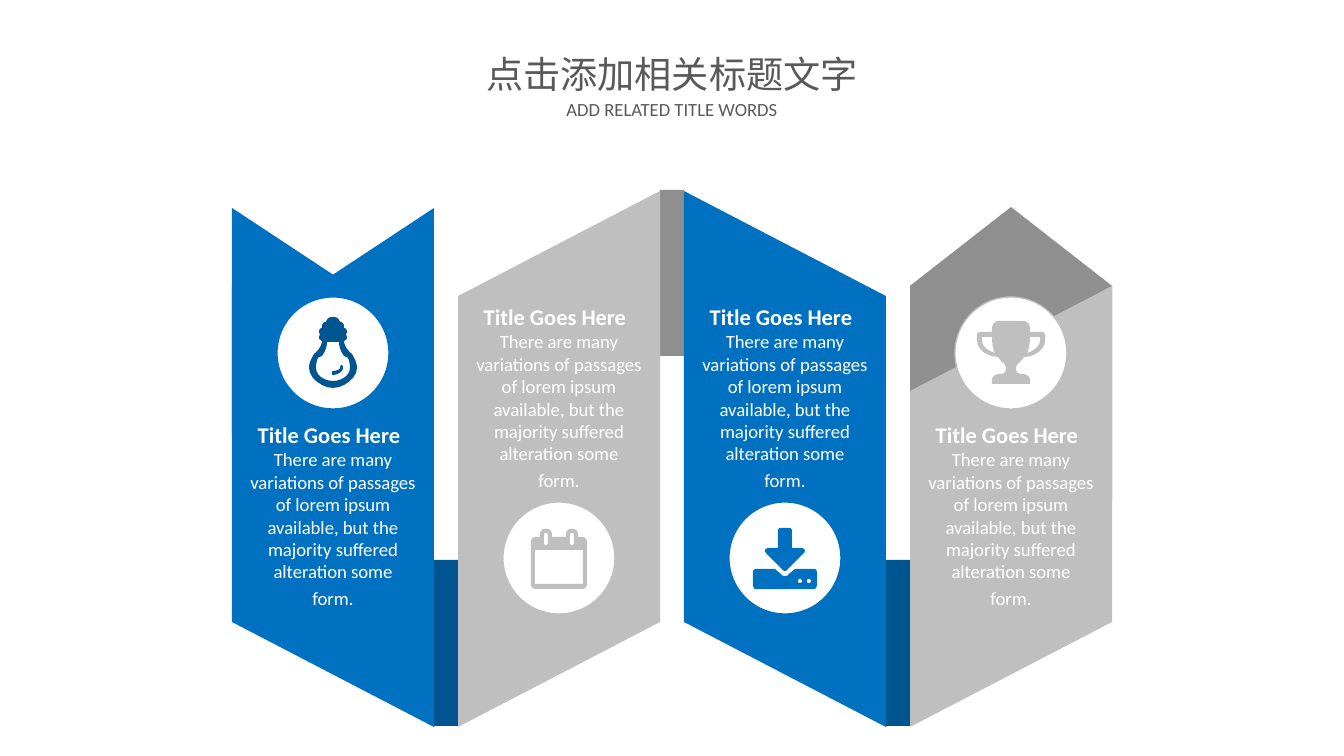
"""Build a slide with a folded ribbon of four titled panels."""
from dataclasses import dataclass

from pptx import Presentation
from pptx.dml.color import RGBColor as Rgb
from pptx.enum.shapes import MSO_SHAPE as Kind
from pptx.enum.text import MSO_ANCHOR as Anchor, PP_ALIGN as Align
from pptx.util import Emu, Pt

UNIT = 914400 / 95.6


@dataclass(frozen=True)
class Theme:
    blue: str = "0070C0"
    navy: str = "005490"
    pale: str = "BFBFBF"
    gray: str = "8F8F8F"
    white: str = "FFFFFF"
    ink: str = "595959"
    font: str = "Calibri"
    head: float = 28
    sub: float = 14
    title: float = 16.9
    body: float = 14.1
    gap: float = 3


LOOK = Theme()
PITCH, WIDE, DISC, TIE = 226, 202, 112, 24
FIRST = 333


def px(num):
    return Emu(round(num * UNIT))


def flat(line):
    pts = [line[0]]
    for item in line[1:]:
        if len(item) == 2:
            pts.append(item)
            continue
        x, y = pts[-1]
        a, b, c, d, e, f = item
        for step in range(1, 7):
            t = step / 6
            u = 1 - t
            pts.append((u**3 * x + 3*u*u*t * a + 3*u*t*t * c + t**3 * e,
                        u**3 * y + 3*u*u*t * b + 3*u*t*t * d + t**3 * f))
    return pts


def flip(pts):
    return [(-x, y) for x, y in reversed(pts)]


def both(half):
    pts = flat(half)
    return pts + flip(pts)


def bulb():
    rim = [(0, 35), (11, 35, 24, 25, 24, 15), (24, 9, 21, 5, 19, 1),
           (16, -1, 11, -7, 11, -12), (13, -13, 14, -14, 14, -15),
           (14, -17, 13, -18, 13, -19), (13, -19, 14, -20, 14, -21),
           (14, -23, 13, -25, 11, -25), (11, -26),
           (11, -30, 9, -31, 7, -31), (6, -35, 3, -36, 0, -36)]
    hole = [(0, 28), (8, 28, 17, 23, 17, 15), (17, 11, 16, 7, 15, 5),
            (14, 4, 13, 4, 11, 3), (8, -1, 6, -6, 6, -11)]
    glint = [(9, 12), (8, 12, 7, 13, 7, 15), (7, 17, 2, 18, 0, 18),
             (-1, 18, -1, 19, -1, 21), (-1, 21, -1, 22, 0, 22),
             (4, 22, 10, 19, 10, 15), (10, 13, 9, 12, 9, 12)]
    return [both(rim), both(hole), flat(glint)]


def diary():
    rim = [(0, 31), (24, 31), (26, 31, 28, 29, 28, 26), (28, -16),
           (28, -19, 26, -21, 23, -21), (19, -21), (19, -23),
           (19, -27, 17, -29, 14, -29), (12, -29),
           (9, -29, 7, -27, 7, -23), (7, -21), (0, -21)]
    page = [(0, 26), (24, 26), (24, -8), (0, -8)]
    slot = [(15, -24), (14, -25), (12, -25), (11, -24),
            (11, -14), (12, -13), (14, -13), (15, -14)]
    return [both(rim), both(page), slot, flip(slot)]


def dot(x):
    return [(x - 1, 21), (x + 1, 21), (x + 2, 22), (x + 2, 24),
            (x + 1, 25), (x - 1, 25), (x - 2, 24), (x - 2, 22)]


def load():
    tray = [(0, 31), (29, 31), (31, 31, 32, 29, 32, 26), (32, 15),
            (32, 12, 31, 11, 29, 11), (10, 11), (4, 16),
            (3, 18, 1, 18, 0, 18)]
    arrow = [(0, 13), (1, 13, 1, 13, 2, 12), (19, -5),
             (20, -6, 20, -8, 20, -8), (19, -9, 18, -10, 17, -10),
             (7, -10), (7, -27), (7, -29, 6, -30, 4, -30), (0, -30)]
    return [both(tray), both(arrow), dot(15), dot(24)]


def cup():
    rim = [(0, -32), (12, -32), (16, -32, 19, -29, 19, -24), (19, -21),
           (30, -21), (33, -21, 34, -20, 34, -17), (34, -12),
           (34, -4, 24, 4, 13, 4), (11, 7, 9, 9, 9, 9),
           (6, 11, 5, 13, 5, 16), (5, 18, 6, 21, 11, 21),
           (15, 21, 19, 23, 19, 27), (19, 30),
           (19, 31, 18, 31, 18, 31), (0, 31)]
    ear = [(29, -16), (19, -16), (19, -9, 18, -4, 16, 0),
           (23, -2, 29, -7, 29, -12)]
    return [both(rim), flat(ear), flip(flat(ear))]


def paint(shape, fill, line=None):
    shape.shadow.inherit = False
    shape.fill.solid()
    shape.fill.fore_color.rgb = Rgb.from_string(fill)
    if line:
        shape.line.color.rgb = Rgb.from_string(line)
        shape.line.width = Pt(1)
    else:
        shape.line.fill.background()


def block(slide, kind, x, y, w, h, fill, line=None):
    shape = slide.shapes.add_shape(kind, px(x), px(y), px(w), px(h))
    paint(shape, fill, line)
    return shape


def fold(slide, kind, mid, top, tall, fill, adj, turn=270, swap=False):
    shape = block(slide, kind, mid - tall / 2, top + (tall - WIDE) / 2,
                  tall, WIDE, fill)
    shape.adjustments[0] = adj
    shape.rotation = turn
    if swap:
        shape._element.spPr.xfrm.set("flipV", "1")


def icon(slide, mid, y, lines, fill):
    spots = [[(px(mid + a), px(y + b)) for a, b in pts] for pts in lines]
    pen = slide.shapes.build_freeform(*spots[0][0], scale=1.0)
    for num, pts in enumerate(spots):
        if num:
            pen.move_to(*pts[0])
        pen.add_line_segments(pts[1:], close=True)
    paint(pen.convert_to_shape(), fill)


def text(slide, mid, y, w, h, paras, size, color,
         bold=False, wrap=False, pad=(0, 0), anchor=Anchor.TOP):
    box = slide.shapes.add_textbox(px(mid - w / 2), px(y), px(w), px(h))
    frame = box.text_frame
    frame.word_wrap = wrap
    frame.vertical_anchor = anchor
    frame.margin_left = frame.margin_right = px(pad[0])
    frame.margin_top = frame.margin_bottom = px(pad[1])
    for num, lines in enumerate(paras):
        para = frame.add_paragraph() if num else frame.paragraphs[0]
        para.alignment = Align.CENTER
        para.space_before = Pt(LOOK.gap if num else 0)
        for row, words in enumerate(lines):
            if row:
                para.add_line_break()
            run = para.add_run()
            run.text = words
            run.font.name, run.font.size = LOOK.font, Pt(size)
            run.font.bold = bold
            run.font.color.rgb = Rgb.from_string(color)


def card(slide, mid, disc, title, lines, edge, ink):
    block(slide, Kind.OVAL, mid - DISC / 2, disc, DISC, DISC,
          LOOK.white, edge)
    icon(slide, mid, disc + DISC / 2, lines, ink)
    text(slide, mid, title + 27, 186, 163,
         [["There are many variations of passages",
           "of lorem ipsum available, but the majority suffered "
           "alteration some"], ["form."]],
         LOOK.body, LOOK.white, wrap=True)
    text(slide, mid - 4, title, 143, 27, [["Title Goes Here"]],
         LOOK.title, LOOK.white, bold=True, anchor=Anchor.MIDDLE)


def main():
    deck = Presentation()
    deck.slide_width, deck.slide_height = px(1344), px(756)
    slide = deck.slides.add_slide(deck.slide_layouts[6])
    mids = [FIRST + PITCH * num for num in range(4)]

    fold(slide, Kind.CHEVRON, mids[3], 207, 292, LOOK.gray, 0.39)
    fold(slide, Kind.CHEVRON, mids[0], 208, 292, LOOK.blue, 0.33, turn=90)
    ties = [(560, LOOK.navy), (190, LOOK.gray), (560, LOOK.navy)]
    for mid, (top, fill) in zip(mids, ties):
        block(slide, Kind.RECTANGLE, mid + WIDE / 2, top, TIE, 166, fill)
    for num, mid in enumerate(mids):
        tall = 441 if num in (0, 3) else 536
        fold(slide, Kind.PARALLELOGRAM, mid, 727 - tall, tall,
             LOOK.pale if num % 2 else LOOK.blue, 0.52, swap=num % 2 == 1)

    high, low = (297, 421), (502, 303)
    cards = [(high, bulb(), LOOK.blue, LOOK.navy),
             (low, diary(), LOOK.pale, LOOK.pale),
             (low, load(), LOOK.blue, LOOK.blue),
             (high, cup(), LOOK.pale, LOOK.pale)]
    for mid, (spot, lines, edge, ink) in zip(mids, cards):
        card(slide, mid, *spot, lines, edge, ink)

    text(slide, 672, 46, 396, 55, [["点击添加相关标题文字"]],
         LOOK.head, LOOK.ink, pad=(10, 5))
    text(slide, 672, 93, 237, 32, [["ADD RELATED TITLE WORDS"]],
         LOOK.sub, LOOK.ink, pad=(10, 5))
    deck.save("out.pptx")


if __name__ == "__main__":
    main()
